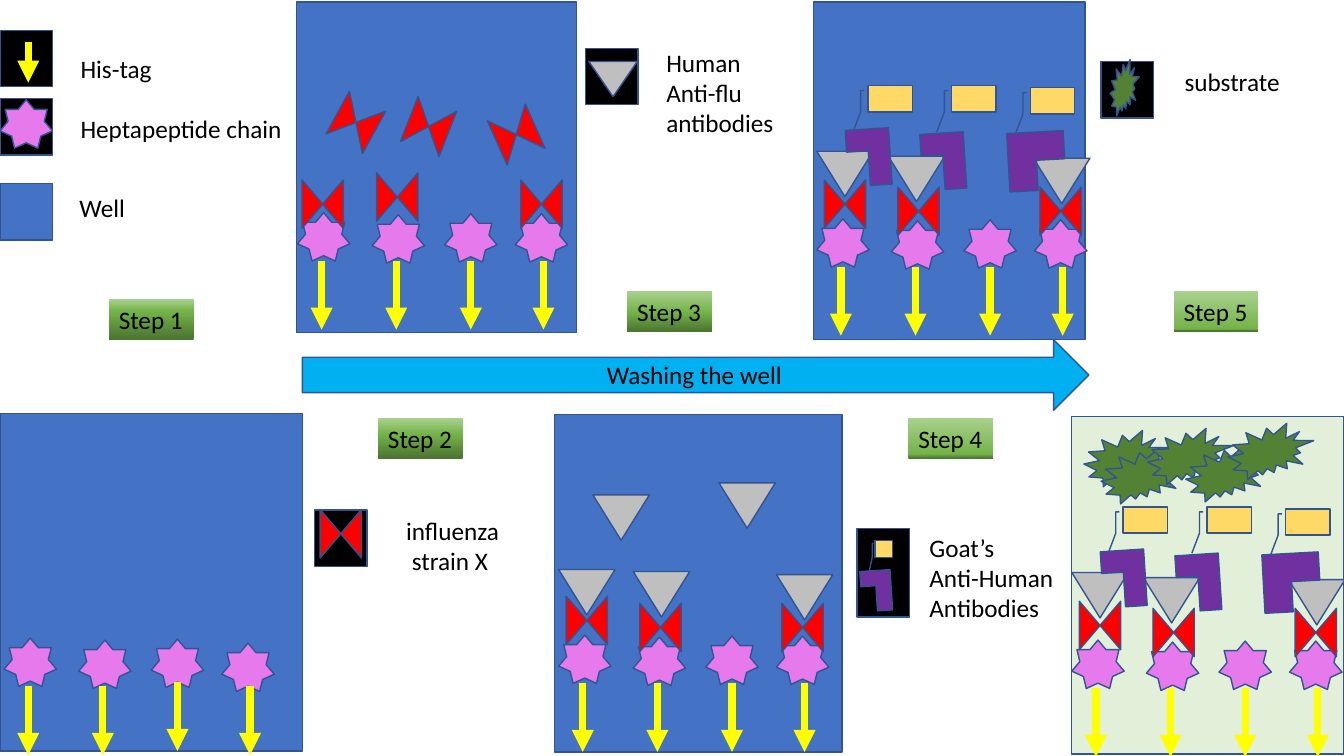
from copy import deepcopy
from pptx import Presentation
from pptx.dml.color import RGBColor
from pptx.enum.shapes import MSO_CONNECTOR, MSO_SHAPE
from pptx.oxml.ns import qn
from pptx.util import Inches, Pt
from lxml import etree

RECT, STAR, BOW = MSO_SHAPE.RECTANGLE, MSO_SHAPE.STAR_7_POINT, MSO_SHAPE.FLOWCHART_COLLATE
WEDGE, HOOK = MSO_SHAPE.ISOSCELES_TRIANGLE, MSO_SHAPE.CORNER
FLAG, BURST, BAND = MSO_SHAPE.LINE_CALLOUT_3, MSO_SHAPE.EXPLOSION2, MSO_SHAPE.RIGHT_ARROW
STRAIGHT = MSO_CONNECTOR.STRAIGHT

BLACK = RGBColor(0, 0, 0)
BLUE = RGBColor(0x44, 0x72, 0xC4)
EDGE = RGBColor(0x32, 0x54, 0x91)
YELLOW = RGBColor(0xFF, 0xFF, 0)
PINK = RGBColor(0xE6, 0x79, 0xEC)
RED = RGBColor(0xFF, 0, 0)
GREY = RGBColor(0xBF, 0xBF, 0xBF)
PURPLE = RGBColor(0x70, 0x30, 0xA0)
GOLD = RGBColor(0xFF, 0xD9, 0x66)
GREEN = RGBColor(0x54, 0x82, 0x35)
PALE = RGBColor(0xE2, 0xF0, 0xD9)
SKY = RGBColor(0, 0xB0, 0xF0)
SHADES = [RGBColor(0x4B, 0x74, 0x30), RGBColor(0x74, 0xB3, 0x49), RGBColor(0xA9, 0xD1, 0x8E)]

deck = Presentation()
deck.slide_width, deck.slide_height = Inches(13.33), Inches(7.5)
slide = deck.slides.add_slide(deck.slide_layouts[6])
shapes = slide.shapes


def draw(kind, color, x, y, w, h, turn=0):
    shape = shapes.add_shape(kind, Inches(x), Inches(y), Inches(w), Inches(h))
    shape.shadow.inherit = False
    shape.fill.solid()
    shape.fill.fore_color.rgb = color
    shape.line.color.rgb = EDGE
    shape.line.width = Pt(1)
    shape.rotation = turn
    if kind == FLAG:
        shape.adjustments[6], shape.adjustments[7] = 1.764, -0.338


def write(text, x, y, w, h=0.4):
    box = shapes.add_textbox(Inches(x), Inches(y), Inches(w), Inches(h))
    box.text_frame.word_wrap = False
    box.text_frame.text = text
    for para in box.text_frame.paragraphs:
        para.font.name = "Calibri"
        para.font.size = Pt(18)
        para.font.color.rgb = BLACK
    return box


# Wells: box, fill, first star, drop of the last star, lift of the third tag
wells = [
    ((0, 4.1, 3, 3.35), BLUE, (0.04, 6.33), 0.04, 0.04),
    ((2.94, 0.02, 2.78, 3.28), BLUE, (2.95, 2.11), 0, 0),
    ((5.5, 4.11, 2.85, 3.35), BLUE, (5.54, 6.3), 0, 0),
    ((8.07, 0.02, 2.69, 3.35), BLUE, (8.1, 2.17), 0, 0),
    ((10.63, 4.13, 2.7, 3.35), PALE, (10.63, 6.35), 0, 0),
]
# Places of the parts, measured from the first star of a well
stars = [(0, 0), (0.74, 0.02), (1.46, 0.01), (2.16, 0.01)]
tags = [0.24, 0.98, 1.72, 2.44]
bound = [(0.04, -0.35), (0.77, -0.28), (2.18, -0.28)]
caught = [(0, -0.67), (0.71, -0.62), (2.15, -0.6)]
hooks = [(1.04, -0.85, 0.43, 176.3), (1.89, -0.85, 0.58, 86.9), (0.3, -0.89, 0.43, 176.3)]
flags = [(0.51, -1.32), (1.34, -1.32), (2.12, -1.3)]
bows = {
    2: [(0.01, -0.29, 90), (0.75, -0.36, 90), (2.18, -0.29, 90),
        (1.93, -0.98, 66), (1.06, -1.06, 111.3), (0.34, -1.1, 118.7)],
}
wedges = {
    3: [(0, -0.65), (0.74, -0.63), (2.16, -0.6), (1.59, -1.51), (0.34, -1.39)],
}

spots = [(0.28, 0.42, 0.4)]
draw(RECT, BLACK, 0, 0.3, 0.52, 0.56)
for step, (box, color, (left, top), drop, lift) in enumerate(wells, 1):
    draw(RECT, color, *box)
    for i, (dx, dy) in enumerate(stars):
        draw(STAR, PINK, left + dx, top + dy + drop * (i == 3), 0.52, 0.48)
        spots.append((left + tags[i], top + 0.48 - lift * (i == 2), 0.68))
    for x, y, size in spots:
        tag = shapes.add_connector(STRAIGHT, Inches(x), Inches(y), Inches(x), Inches(y + size))
        tag.line.color.rgb = YELLOW
        tag.line.width = Pt(5.25)
        etree.SubElement(tag.line._get_or_add_ln(), qn("a:tailEnd"), type="triangle")
        etree.SubElement(tag._element.spPr, qn("a:effectLst"))
    spots = []
    if step > 1:
        for dx, dy, turn in bows.get(step, [(*place, 90) for place in bound]):
            draw(BOW, RED, left + dx, top + dy, 0.48, 0.41, turn)
    if step > 2:
        for dx, dy in wedges.get(step, caught):
            draw(WEDGE, GREY, left + dx, top + dy, 0.56, 0.45, 180)
    if step > 3:
        for dx, dy, wide, turn in hooks:
            draw(HOOK, PURPLE, left + dx, top + dy, wide, 0.56, turn)
        for dx, dy in flags:
            draw(FLAG, GOLD, left + dx, top + dy, 0.44, 0.26)

for x, y in [(10.75, 4.27), (10.92, 4.44), (11.38, 4.25), (11.76, 4.42), (12.18, 4.2)]:
    draw(BURST, GREEN, x, y, 0.85, 0.56)

# Legend
draw(RECT, BLUE, 0, 1.82, 0.52, 0.56)
for x, y, h in [(0, 0.98, 0.56), (3.12, 5.06, 0.56), (5.81, 0.48, 0.56),
                (10.92, 0.61, 0.56), (8.5, 5.24, 0.88)]:
    draw(RECT, BLACK, x, y, 0.52, h)
draw(STAR, PINK, 0, 0.99, 0.52, 0.48)
draw(BOW, RED, 3.14, 5.09, 0.48, 0.41, 90)
draw(WEDGE, GREY, 5.84, 0.61, 0.48, 0.35, 180)
draw(HOOK, PURPLE, 8.54, 5.66, 0.3, 0.4, 176.3)
draw(FLAG, GOLD, 8.68, 5.36, 0.17, 0.17)
draw(BURST, GREEN, 11.01, 0.59, 0.29, 0.56)

write("His-tag", 0.7, 0.48, 0.91)
write("Heptapeptide chain", 0.7, 1.08, 2.22)
write("Well", 0.69, 1.86, 0.66)
write("influenza\v strain X", 3.93, 5.06, 1.14, 1.01)
write("Human\nAnti-flu\vantibodies", 6.51, 0.42, 1.28, 1.01)
write("Goat’s\nAnti-Human\nAntibodies", 9.12, 5.23, 1.44, 1.01)
write("substrate", 11.65, 0.61, 1.15)

draw(BAND, SKY, 3, 3.37, 7.8, 0.7)
write("Washing the well", 5.92, 3.52, 1.96)

# Step labels: place, then start and middle of the gradient
steps = [(1.08, 2.97, 0, 0.71), (3.75, 4.15, 0, 0.61), (6.22, 2.89, 0, 0.48),
         (9.01, 4.15, 0, 0.12), (11.64, 2.89, 0.02, 0.06)]
for step, (x, y, start, mid) in enumerate(steps, 1):
    fill = write(f"Step {step}", x, y, 0.84).fill
    fill.gradient()
    fill.gradient_angle = 90
    first = fill.gradient_stops[0]._gs
    first.addnext(deepcopy(first))
    for stop, shade, place in zip(fill.gradient_stops, SHADES, (start, mid, 1)):
        stop.color.rgb = shade
        stop.position = place

deck.save("out.pptx")
